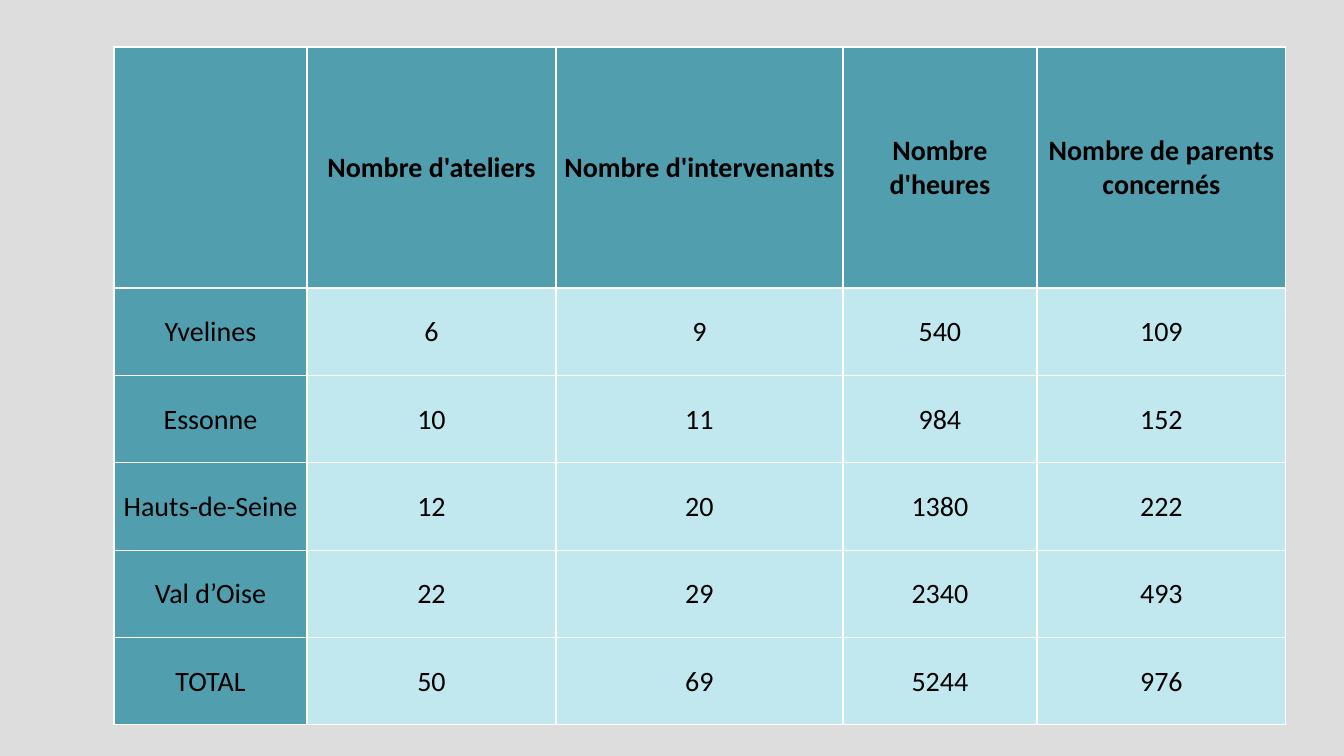
from lxml import etree
from pptx import Presentation
from pptx import util as u
from pptx.dml.color import RGBColor
from pptx.enum import text
from pptx.oxml.ns import qn

PX = 914400 / 100.8
BACKGROUND = RGBColor(0xDD, 0xDD, 0xDD)
TEAL = RGBColor(0x0D, 0x80, 0x97)
PALE_BLUE = RGBColor(0xB5, 0xEE, 0xF9)
BLACK = RGBColor(0, 0, 0)
WHITE = RGBColor(0xFF, 0xFF, 0xFF)
OPACITY = 67

COLUMN_WIDTHS = [193, 249, 287, 194, 249]
HEADER_HEIGHT = 241
ROWS = [
    ["", "Nombre d'ateliers", "Nombre d'intervenants", "Nombre d'heures",
     "Nombre de parents concernés"],
    ["Yvelines", 6, 9, 540, 109],
    ["Essonne", 10, 11, 984, 152],
    ["Hauts-de-Seine", 12, 20, 1380, 222],
    ["Val d’Oise", 22, 29, 2340, 493],
    ["TOTAL", 50, 69, 5244, 976],
]
CELL_FORMAT = {
    "vertical_anchor": text.MSO_ANCHOR.MIDDLE,
    "margin_left": u.Inches(0.01),
    "margin_right": u.Inches(0.01),
    "margin_top": u.Inches(0.01),
    "margin_bottom": 0,
}
FONT_FORMAT = {"name": "Calibri", "size": u.Pt(20)}


def px(length):
    return u.Emu(round(length * PX))


def set_attributes(target, values):
    for name, value in values.items():
        setattr(target, name, value)


def fill_cell(cell, color):
    """Fill the cell with a translucent colour and rule its four sides."""
    cell.fill.solid()
    cell.fill.fore_color.rgb = color
    properties = cell._tc.get_or_add_tcPr()
    color_element = properties.find(qn("a:solidFill"))[0]
    etree.SubElement(color_element, qn("a:alpha"), val=str(OPACITY * 1000))
    for position, side in enumerate("LRTB"):
        line = etree.Element(qn(f"a:ln{side}"), w=str(u.Pt(1)))
        line_fill = etree.SubElement(line, qn("a:solidFill"))
        etree.SubElement(line_fill, qn("a:srgbClr"), val=str(WHITE))
        properties.insert(position, line)


def write_cell(cell, value, bold):
    set_attributes(cell, CELL_FORMAT)
    paragraph = cell.text_frame.paragraphs[0]
    paragraph.alignment = text.PP_ALIGN.CENTER
    set_attributes(paragraph.font, FONT_FORMAT)
    if value != "":
        run = paragraph.add_run()
        run.text = str(value)
        set_attributes(run.font, {**FONT_FORMAT, "bold": bold})
        run.font.color.rgb = BLACK


def add_workshop_table(slide, left, top, width, height):
    frame = slide.shapes.add_table(len(ROWS), len(COLUMN_WIDTHS),
                                   px(left), px(top), px(width), px(height))
    table = frame.table
    set_attributes(table, {"first_row": False, "horz_banding": False})
    for column, share in zip(table.columns, COLUMN_WIDTHS):
        column.width = px(width * share / sum(COLUMN_WIDTHS))
    body_height = (height - HEADER_HEIGHT) / (len(ROWS) - 1)
    for i, values in enumerate(ROWS):
        table.rows[i].height = px(body_height if i else HEADER_HEIGHT)
        for j, value in enumerate(values):
            cell = table.cell(i, j)
            fill_cell(cell, PALE_BLUE if i and j else TEAL)
            write_cell(cell, value, bold=i == 0)


def main():
    presentation = Presentation()
    set_attributes(presentation, {"slide_width": px(1344), "slide_height": px(756)})
    slide = presentation.slides.add_slide(presentation.slide_layouts[6])
    slide.background.fill.solid()
    slide.background.fill.fore_color.rgb = BACKGROUND
    add_workshop_table(slide, 114, 47, 1172, 678)
    presentation.save("out.pptx")


if __name__ == "__main__":
    main()
